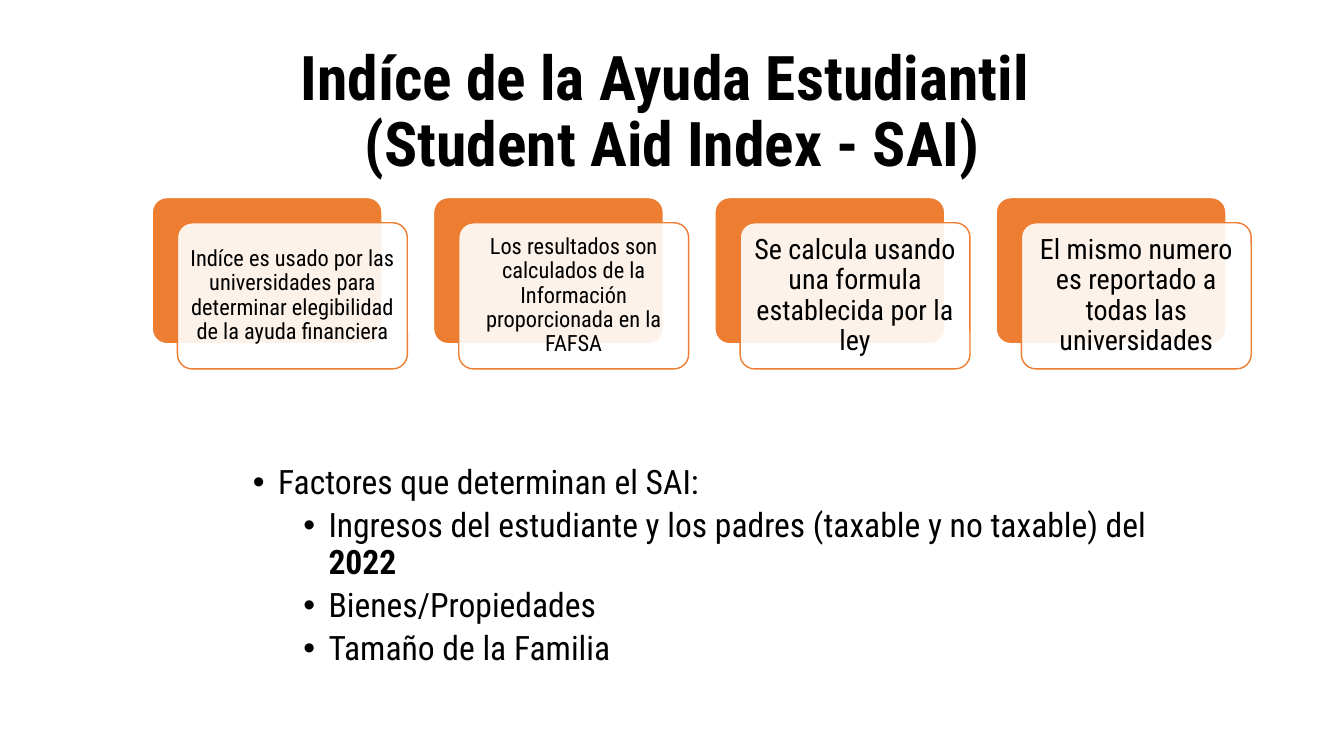
from dataclasses import dataclass

from lxml import etree
from pptx import Presentation
from pptx.dml.color import RGBColor
from pptx.enum.shapes import MSO_SHAPE
from pptx.enum.text import MSO_ANCHOR, MSO_AUTO_SIZE, PP_ALIGN
from pptx.oxml.ns import qn
from pptx.util import Inches, Pt

ROUNDED = MSO_SHAPE.ROUNDED_RECTANGLE
MIDDLE = MSO_ANCHOR.MIDDLE
CENTER = PP_ALIGN.CENTER
LEFT = PP_ALIGN.LEFT
NO_AUTOFIT = MSO_AUTO_SIZE.NONE
TITLE_ONLY = 5


@dataclass(frozen=True)
class Theme:
    font: str = "Roboto Condensed"
    text: RGBColor = RGBColor(0x00, 0x00, 0x00)
    accent: RGBColor = RGBColor(0xED, 0x7D, 0x31)
    paper: RGBColor = RGBColor(0xFF, 0xFF, 0xFF)
    title_size: int = 44
    body_size: int = 24
    card_large: int = 20
    card_small: int = 16


THEME = Theme()

TITLE_LINES = ["Indíce de la Ayuda Estudiantil ", "(Student Aid Index - SAI)"]

CARDS = [
    ("Indíce es usado por las universidades para determinar elegibilidad "
     "de la ayuda financiera", THEME.card_small),
    ("Los resultados son calculados de la Información proporcionada en la FAFSA",
     THEME.card_small),
    ("Se calcula usando una formula establecida por la ley", THEME.card_large),
    ("El mismo numero es reportado a todas las universidades", THEME.card_large),
]

# Each factor: indent level, plain text, bold ending
FACTORS = [
    (0, "Factores que determinan el SAI:", ""),
    (1, "Ingresos del estudiante y los padres (taxable y no taxable) del ", "2022"),
    (1, "Bienes/Propiedades", ""),
    (1, "Tamaño de la Familia", ""),
]


def write(paragraph, text, size, bold=False, align=LEFT, space_before=0):
    """Add a formatted run to a paragraph."""
    paragraph.alignment = align
    paragraph.line_spacing = 0.9
    paragraph.space_before = Pt(space_before)
    run = paragraph.add_run()
    run.text = text
    run.font.name = THEME.font
    run.font.size = Pt(size)
    run.font.bold = bold
    run.font.color.rgb = THEME.text


def add_bullet(paragraph, level):
    paragraph.level = level
    properties = paragraph._p.get_or_add_pPr()
    properties.set("marL", str(Inches(0.25 + 0.5 * level)))
    properties.set("indent", str(Inches(-0.25)))
    etree.SubElement(properties, qn("a:buFont"), typeface="Arial")
    etree.SubElement(properties, qn("a:buChar"), char="•")


def add_panel(slide, left, top, width, height, fill, line, opacity=100):
    panel = slide.shapes.add_shape(
        ROUNDED, Inches(left), Inches(top), Inches(width), Inches(height))
    panel.adjustments[0] = 0.1
    panel.shadow.inherit = False
    panel.fill.solid()
    panel.fill.fore_color.rgb = fill
    panel.line.color.rgb = line
    panel.line.width = Pt(1)
    if opacity < 100:
        color = panel.fill._xPr.find(qn("a:solidFill"))[0]
        etree.SubElement(color, qn("a:alpha"), val=str(opacity * 1000))
    return panel


def add_title(slide, left, top, width, height):
    title = slide.shapes.title
    title.left, title.top = Inches(left), Inches(top)
    title.width, title.height = Inches(width), Inches(height)
    frame = title.text_frame
    frame.word_wrap = True
    frame.auto_size = NO_AUTOFIT
    frame.vertical_anchor = MIDDLE
    paragraph = frame.paragraphs[0]
    for number, line in enumerate(TITLE_LINES):
        if number:
            paragraph.add_line_break()
        write(paragraph, line, THEME.title_size, bold=True, align=CENTER)


def add_card(slide, left, top, width, height, text, size):
    # Solid panel behind, translucent text panel shifted down and right
    shift = 0.25
    panel_size = width - shift, height - shift
    add_panel(slide, left, top, *panel_size, THEME.accent, THEME.paper)
    front = add_panel(slide, left + shift, top + shift, *panel_size,
                      THEME.paper, THEME.accent, opacity=90)
    frame = front.text_frame
    frame.word_wrap = True
    frame.vertical_anchor = MIDDLE
    inset = Inches(0.07 if size == THEME.card_small else 0.08)
    frame.margin_left = frame.margin_right = inset
    frame.margin_top = frame.margin_bottom = inset
    write(frame.paragraphs[0], text, size, align=CENTER)


def add_card_row(slide, left, top, width, height):
    gap = 0.26
    card_width = (width - gap * (len(CARDS) - 1)) / len(CARDS)
    for number, (text, size) in enumerate(CARDS):
        add_card(slide, left + number * (card_width + gap), top,
                 card_width, height, text, size)


def add_factors(slide, left, top, width, height):
    box = slide.shapes.add_textbox(
        Inches(left), Inches(top), Inches(width), Inches(height))
    frame = box.text_frame
    frame.word_wrap = True
    for number, (level, text, ending) in enumerate(FACTORS):
        paragraph = frame.add_paragraph() if number else frame.paragraphs[0]
        space = 5 if level else 10
        write(paragraph, text, THEME.body_size, space_before=space)
        if ending:
            write(paragraph, ending, THEME.body_size, bold=True, space_before=space)
        add_bullet(paragraph, level)


def main():
    presentation = Presentation()
    presentation.slide_width = Inches(13.33)
    presentation.slide_height = Inches(7.5)
    slide = presentation.slides.add_slide(presentation.slide_layouts[TITLE_ONLY])
    slide.background.fill.solid()
    slide.background.fill.fore_color.rgb = THEME.paper

    add_title(slide, 0.92, 0.4, 11.5, 1.45)
    add_card_row(slide, 1.51, 1.96, 10.9, 1.7)
    add_factors(slide, 2.41, 4.57, 9.42, 1.94)

    presentation.save("out.pptx")


if __name__ == "__main__":
    main()
